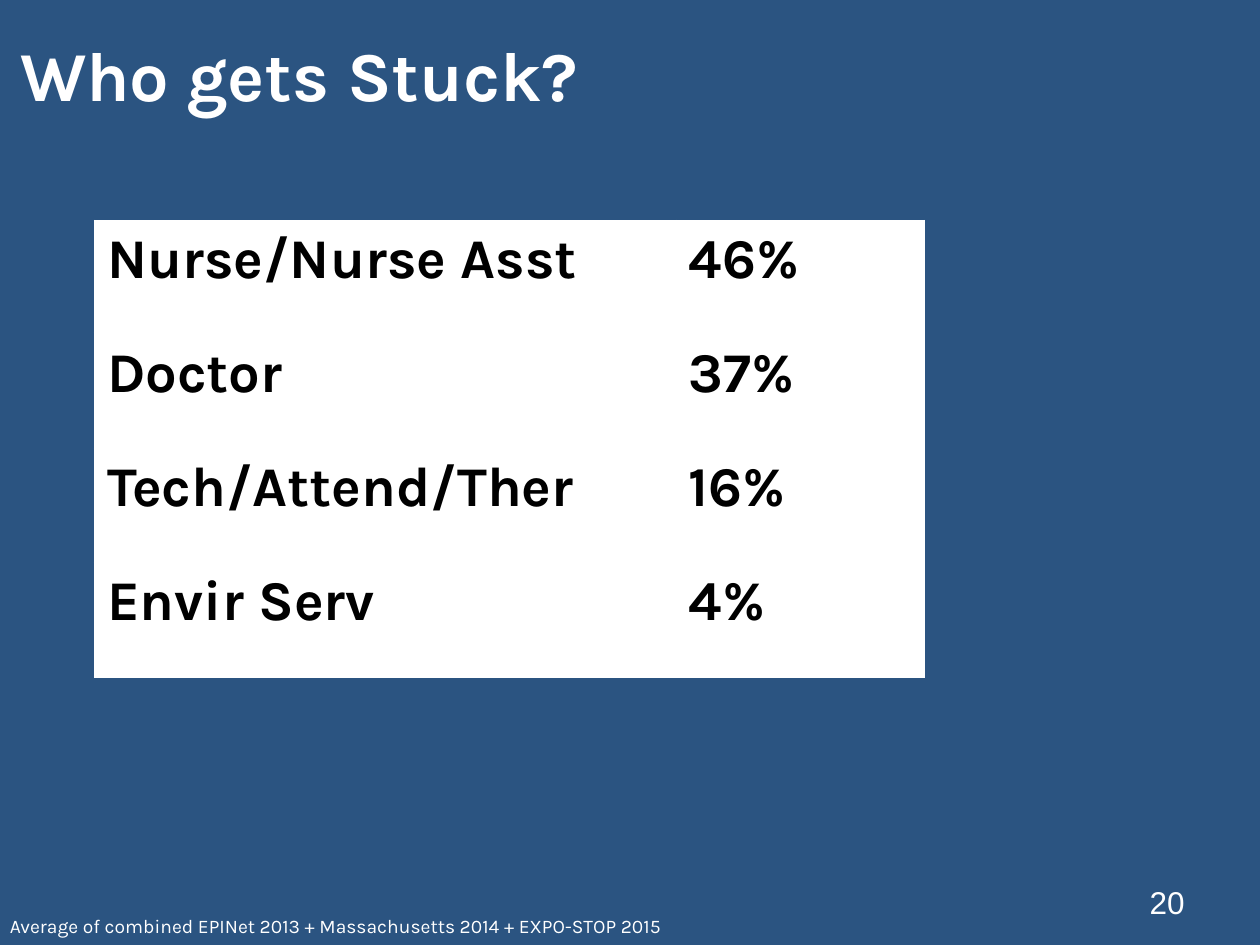
"""Build the slide showing who gets stuck, by job."""
import pptx
import pptx.dml.color
import pptx.enum.text
import pptx.oxml
import pptx.oxml.ns
import pptx.util

Pt = pptx.util.Pt
Align = pptx.enum.text.PP_ALIGN
Anchor = pptx.enum.text.MSO_ANCHOR
NAVY = pptx.dml.color.RGBColor(0x2B, 0x54, 0x81)
WHITE = pptx.dml.color.RGBColor(0xFF, 0xFF, 0xFF)
BLACK = pptx.dml.color.RGBColor(0x00, 0x00, 0x00)
STAFF = [
    ("Nurse/Nurse Asst", "46%"),
    ("Doctor", "37%"),
    ("Tech/Attend/Ther", "16%"),
    ("Envir Serv", "4%"),
]


class Deck:
    def __init__(self, slide, face):
        self.slide = slide
        self.face = face

    def add_run(self, para, words, size, color, bold=False, face=None):
        run = para.add_run()
        run.text = words
        run.font.name = face or self.face
        run.font.size = Pt(size)
        run.font.bold = bold
        run.font.color.rgb = color

    def text(self, box, words, size, bold=False, wrap=True, face=None,
             align=Align.LEFT, anchor=Anchor.TOP):
        frame = self.slide.shapes.add_textbox(*map(Pt, box)).text_frame
        frame.word_wrap = wrap
        frame.vertical_anchor = anchor
        para = frame.paragraphs[0]
        para.alignment = align
        self.add_run(para, words, size, WHITE, bold, face)

    def edge(self, props, side, width):
        line = pptx.oxml.parse_xml(
            f'<a:{side} {pptx.oxml.ns.nsdecls("a")} w="{Pt(width)}">'
            f'<a:solidFill><a:srgbClr val="{WHITE}"/></a:solidFill></a:{side}>')
        props.append(line)

    def table(self, left, top, widths, height, rows):
        table = self.slide.shapes.add_table(
            len(rows), len(widths), Pt(left), Pt(top),
            Pt(sum(widths)), Pt(height * len(rows))).table
        for col, width in zip(table.columns, widths):
            col.width = Pt(width)
        for i, row in enumerate(rows):
            table.rows[i].height = Pt(height)
            for j, words in enumerate(row):
                cell = table.cell(i, j)
                props = cell._tc.get_or_add_tcPr()
                self.edge(props, "lnL", 1)
                self.edge(props, "lnR", 1)
                self.edge(props, "lnT", 3 if i == 1 else 1)
                self.edge(props, "lnB", 3 if i == 0 else 1)
                cell.fill.solid()
                cell.fill.fore_color.rgb = WHITE
                self.add_run(cell.text_frame.paragraphs[0], words, 32, BLACK, True)


def main():
    show = pptx.Presentation()
    show.slide_width, show.slide_height = Pt(720), Pt(540)
    slide = show.slides.add_slide(show.slide_layouts[6])
    slide.background.fill.solid()
    slide.background.fill.fore_color.rgb = NAVY
    deck = Deck(slide, "Karla")
    deck.text((4.5, 14.5, 366.5, 55.5), "Who gets Stuck?", 40, bold=True, wrap=False)
    deck.text((-1.5, 519, 433.5, 21),
              "Average of combined EPINet 2013 + Massachusetts 2014 + EXPO-STOP 2015", 11)
    deck.table(54, 126, (332.5, 141.5), 65.2, STAFF)
    deck.text((516, 492, 168, 37.5), "20", 18, face="Arial",
              align=Align.RIGHT, anchor=Anchor.BOTTOM)
    show.save("out.pptx")


if __name__ == "__main__":
    main()
